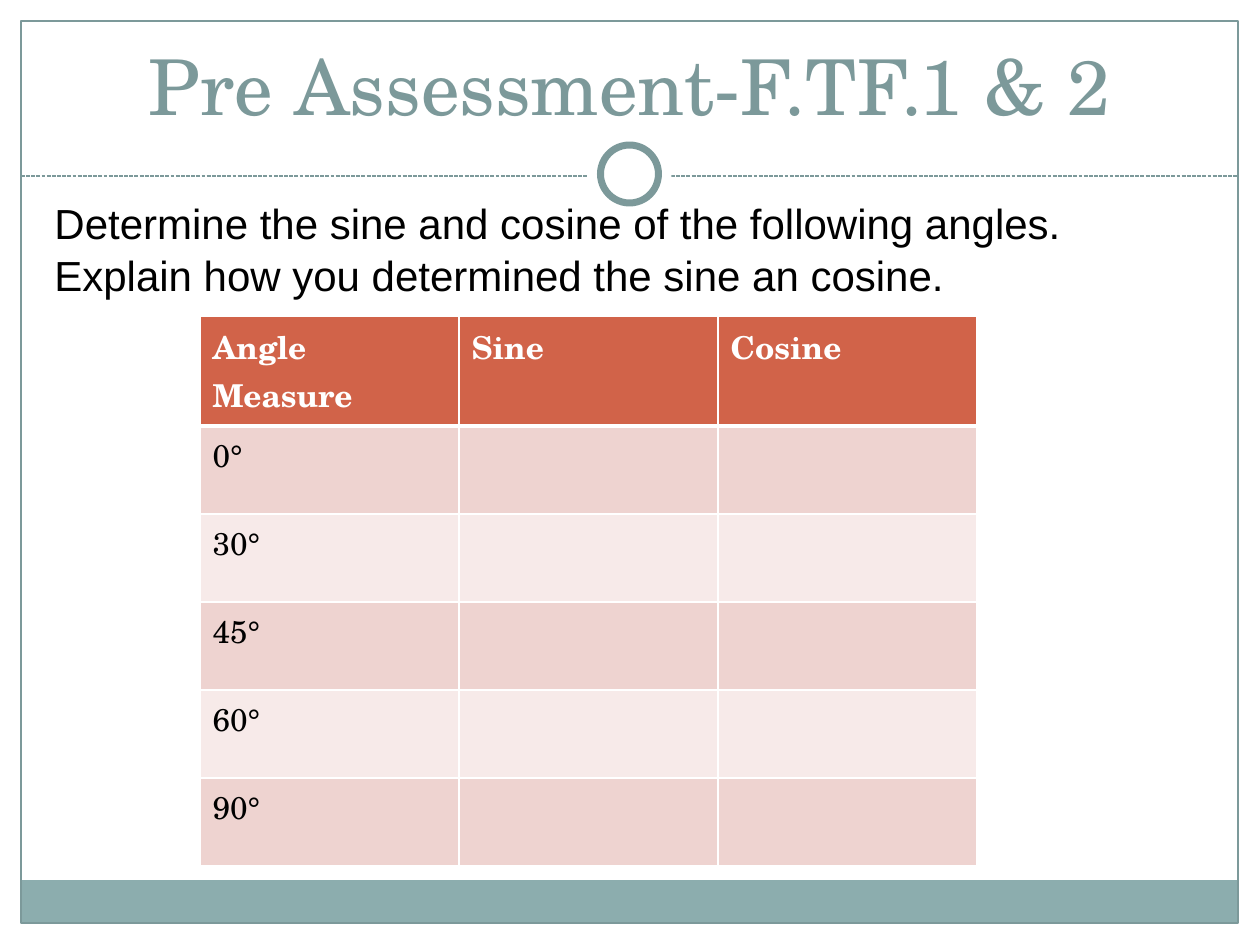
from lxml.etree import SubElement
from pptx import Presentation
from pptx.dml.color import RGBColor
from pptx.enum.dml import MSO_LINE
from pptx.enum.shapes import MSO_CONNECTOR, MSO_SHAPE
from pptx.enum.text import MSO_ANCHOR, PP_ALIGN
from pptx.oxml.ns import qn
from pptx.util import Pt

SCALE = 914400 / 126
WHITE = RGBColor(0xFF, 0xFF, 0xFF)
BLACK = RGBColor(0, 0, 0)
TEAL = RGBColor(0x7C, 0x99, 0x9A)
FOOTER_TEAL = RGBColor(0x8C, 0xAD, 0xAE)
HEADER_RED = RGBColor(0xD1, 0x63, 0x49)
BAND_DARK = RGBColor(0xEE, 0xD3, 0xD0)
BAND_LIGHT = RGBColor(0xF7, 0xEA, 0xE9)
SERIF = "TeX Gyre Schola"
SANS = "Arial"
ANGLES = ["0°", "30°", "45°", "60°", "90°"]
ROWS = [["Angle Measure", "Sine", "Cosine"]] + [[angle, "", ""] for angle in ANGLES]
INSTRUCTIONS = [
    "Determine the sine and cosine of the following angles.",
    "Explain how you determined the sine an cosine.",
]


def px(*lengths):
    return [round(length * SCALE) for length in lengths]


def style_font(font, name, size, color, bold=False):
    font.name = name
    font.size = Pt(size)
    font.color.rgb = color
    font.bold = bold


def add_panel(slide, kind, box, fill=None, line=None, width=0.75):
    panel = slide.shapes.add_shape(kind, *px(*box))
    panel.shadow.inherit = False
    if fill is None:
        panel.fill.background()
    else:
        panel.fill.solid()
        panel.fill.fore_color.rgb = fill
    if line is None:
        panel.line.fill.background()
    else:
        panel.line.color.rgb = line
        panel.line.width = Pt(width)


def add_frame(slide, box):
    left, top, width, height = box
    footer_height = 43
    footer_box = (left, top + height - footer_height, width, footer_height)
    add_panel(slide, MSO_SHAPE.RECTANGLE, footer_box, fill=FOOTER_TEAL)
    add_panel(slide, MSO_SHAPE.RECTANGLE, box, line=TEAL)

    divider_y = top + 155
    divider = slide.shapes.add_connector(
        MSO_CONNECTOR.STRAIGHT, *px(left, divider_y, left + width, divider_y))
    divider.line.color.rgb = TEAL
    divider.line.width = Pt(0.75)
    divider.line.dash_style = MSO_LINE.SQUARE_DOT
    SubElement(divider.line._get_or_add_ln().getparent(), qn("a:effectLst"))

    center_x, center_y = left + width / 2, divider_y - 2
    for diameter, outline in ((84, None), (58, TEAL)):
        ring_box = (center_x - diameter / 2, center_y - diameter / 2, diameter, diameter)
        add_panel(slide, MSO_SHAPE.OVAL, ring_box, WHITE, outline, 4)


def add_title(slide, box):
    title = slide.shapes.title
    title.left, title.top, title.width, title.height = px(*box)
    title.text_frame.text = "Pre Assessment-F.TF.1 & 2"
    title.text_frame.vertical_anchor = MSO_ANCHOR.BOTTOM
    paragraph = title.text_frame.paragraphs[0]
    paragraph.alignment = PP_ALIGN.CENTER
    style_font(paragraph.runs[0].font, SERIF, 44, TEAL)


def add_instructions(slide, box):
    instructions = slide.shapes.add_textbox(*px(*box)).text_frame
    instructions.word_wrap = True
    instructions.text = "\n".join(INSTRUCTIONS)
    for paragraph in instructions.paragraphs:
        paragraph.space_before = Pt(1)
        style_font(paragraph.runs[0].font, SANS, 24, BLACK)


def set_borders(cell, bottom_width):
    properties = cell._tc.get_or_add_tcPr()
    widths = {"a:lnL": 1, "a:lnR": 1, "a:lnT": 1, "a:lnB": bottom_width}
    for index, (tag, width) in enumerate(widths.items()):
        border = SubElement(properties, qn(tag), w=str(Pt(width)))
        SubElement(SubElement(border, qn("a:solidFill")), qn("a:srgbClr"), val=str(WHITE))
        properties.insert(index, border)


def add_angle_table(slide, box):
    left, top, width, height = box
    header_height = 110
    row_height = (height - header_height) / len(ANGLES)
    table = slide.shapes.add_table(len(ROWS), len(ROWS[0]), *px(*box)).table
    for column in table.columns:
        column.width = px(width / len(ROWS[0]))[0]
    for row_index, texts in enumerate(ROWS):
        is_header = row_index == 0
        band = BAND_DARK if row_index % 2 else BAND_LIGHT
        table.rows[row_index].height = px(header_height if is_header else row_height)[0]
        for cell, text in zip(table.rows[row_index].cells, texts):
            cell.text = text
            cell.fill.solid()
            cell.fill.fore_color.rgb = HEADER_RED if is_header else band
            set_borders(cell, 3 if is_header else 1)
            for run in cell.text_frame.paragraphs[0].runs:
                style_font(run.font, SERIF, 18, WHITE if is_header else BLACK, is_header)


def main():
    presentation = Presentation()
    presentation.slide_width, presentation.slide_height = px(1260, 945)
    slide = presentation.slides.add_slide(presentation.slide_layouts[5])
    add_frame(slide, (21, 21, 1217, 902))
    add_title(slide, (42, 32, 1176, 105))
    add_instructions(slide, (42, 191, 1218, 683))
    add_angle_table(slide, (200, 316, 777, 550))
    presentation.save("out.pptx")


if __name__ == "__main__":
    main()
